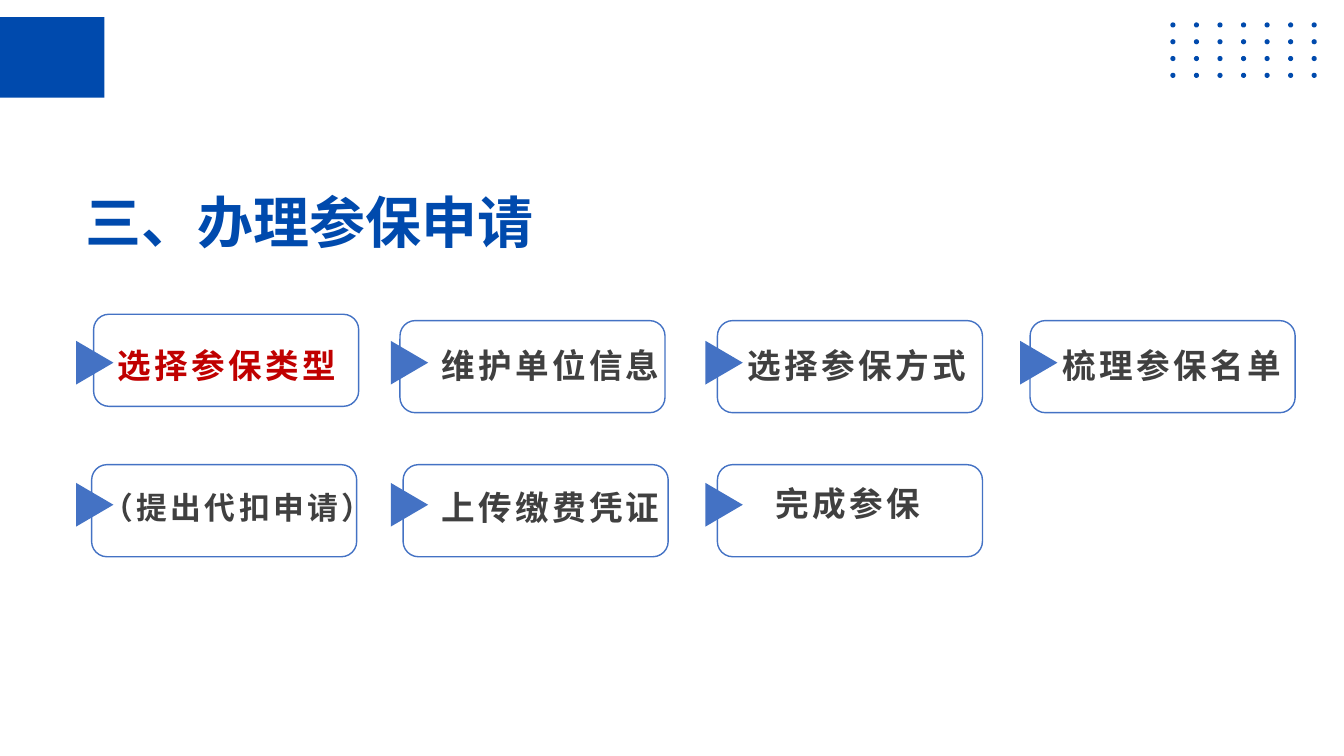
from math import cos, pi, sin

from lxml.etree import SubElement
from pptx import Presentation
from pptx.dml.color import RGBColor
from pptx.enum.shapes import MSO_SHAPE as Shape
from pptx.enum.text import MSO_ANCHOR as Anchor, PP_ALIGN as Align
from pptx.oxml.ns import qn
from pptx.util import Cm, Pt

BRAND, STEP_BLUE, GREY, RED = "004AAD", "4472C4", "404040", "C00000"
CJK = "Noto Sans CJK SC"


def colour(hex_string):
    return RGBColor.from_string(hex_string)


class ProcessSlide:
    """The slide, its fonts, and one method per kind of element."""

    def __init__(self, presentation):
        self.slide = presentation.slides.add_slide(presentation.slide_layouts[5])
        self.shapes = self.slide.shapes

    def style_text(self, paragraph, size, hex_string, font, spacing=0):
        paragraph.font.size = Pt(size)
        paragraph.font.bold = True
        paragraph.font.name = font
        paragraph.font.color.rgb = colour(hex_string)
        properties = paragraph._p.pPr.find(qn("a:defRPr"))
        SubElement(properties, qn("a:ea")).set("typeface", CJK)
        if spacing:
            properties.set("spc", str(spacing))

    def fill(self, shape, hex_string):
        shape.shadow.inherit = False
        shape.fill.solid()
        shape.fill.fore_color.rgb = colour(hex_string)
        shape.line.fill.background()

    def title(self, text, left, top, width, height):
        title = self.shapes.title
        title.left, title.top, title.width, title.height = map(Cm, (left, top, width, height))
        frame = title.text_frame
        frame.text = text
        frame.vertical_anchor = Anchor.TOP
        paragraph = frame.paragraphs[0]
        paragraph.alignment = Align.LEFT
        self.style_text(paragraph, 40, BRAND, CJK)

    def block(self, left, top, width, height):
        shape = self.shapes.add_shape(Shape.RECTANGLE, *map(Cm, (left, top, width, height)))
        self.fill(shape, BRAND)

    def outline(self, left, top, width, height):
        shape = self.shapes.add_shape(Shape.ROUNDED_RECTANGLE, *map(Cm, (left, top, width, height)))
        shape.shadow.inherit = False
        shape.fill.background()
        shape.line.color.rgb = colour(STEP_BLUE)
        shape.line.width = Pt(1)

    def polygons(self, outlines, hex_string):
        """Draw closed outlines, given as points in cm, as one shape."""
        builder = None
        for outline in outlines:
            first, *rest = [(Cm(x), Cm(y)) for x, y in outline]
            if builder is None:
                builder = self.shapes.build_freeform(*first, scale=1.0)
            else:
                builder.move_to(*first)
            builder.add_line_segments(rest, close=True)
        self.fill(builder.convert_to_shape(), hex_string)

    def label(self, text, left, top, width, size, hex_string, centred):
        box = self.shapes.add_textbox(*map(Cm, (left, top, width, 3.63)))
        frame = box.text_frame
        frame.word_wrap = True
        frame.vertical_anchor = Anchor.MIDDLE
        paragraph = frame.paragraphs[0]
        paragraph.text = text
        paragraph.alignment = Align.CENTER if centred else Align.LEFT
        paragraph.line_spacing = 1.0 if centred else 1.2
        paragraph.space_after = Pt(8)
        self.style_text(paragraph, size, hex_string, "Arial", 240)


def dot(x, y, radius=0.064, sides=16):
    angles = [2 * pi * side / sides for side in range(sides)]
    return [(x + radius * cos(angle), y + radius * sin(angle)) for angle in angles]


# Row, column, text, label left and width, outline left and top, size, colour, centred
STEPS = [
    (0, 0, "选择参保类型", 2.72, 6.5, 2.36, 7.92, 24, RED, False),
    (0, 1, "维护单位信息", 10.87, 6.48, 10.08, 8.08, 24, GREY, False),
    (0, 2, "选择参保方式", 18.59, 6.4, 18.08, 8.08, 24, GREY, False),
    (0, 3, "梳理参保名单", 26.52, 6.2, 25.96, 8.08, 24, GREY, False),
    (1, 0, "（提出代扣申请）", 2.34, 7.32, 2.31, 11.71, 22, GREY, False),
    (1, 1, "上传缴费凭证", 10.87, 6.25, 10.16, 11.71, 24, GREY, False),
    (1, 2, "完成参保", 18.59, 5.54, 18.08, 11.71, 24, GREY, True),
]


def main():
    presentation = Presentation()
    presentation.slide_width, presentation.slide_height = Cm(33.87), Cm(19.05)
    page = ProcessSlide(presentation)

    # Corner decoration
    page.block(0, 0.43, 2.63, 2.03)
    dots = [dot(29.56 + 3.56 / 6 * column, 0.63 + 1.27 / 3 * row)
            for row in range(4) for column in range(7)]
    page.polygons(dots, BRAND)

    # Heading
    page.title("三、办理参保申请", 1.9, 4.6, 24.36, 1.96)

    # Steps: arrow, label and outline
    for row, column, text, left, width, box_left, box_top, size, hex_string, centred in STEPS:
        x, y = 1.92 + 7.93 * column, 8.59 + 3.58 * row
        page.polygons([[(x, y), (x + 0.94, y + 0.55), (x, y + 1.1)]], STEP_BLUE)
        page.label(text, left, y - 1.3, width, size, hex_string, centred)
        page.outline(box_left, box_top, 6.68, 2.32)

    presentation.save("out.pptx")


if __name__ == "__main__":
    main()
